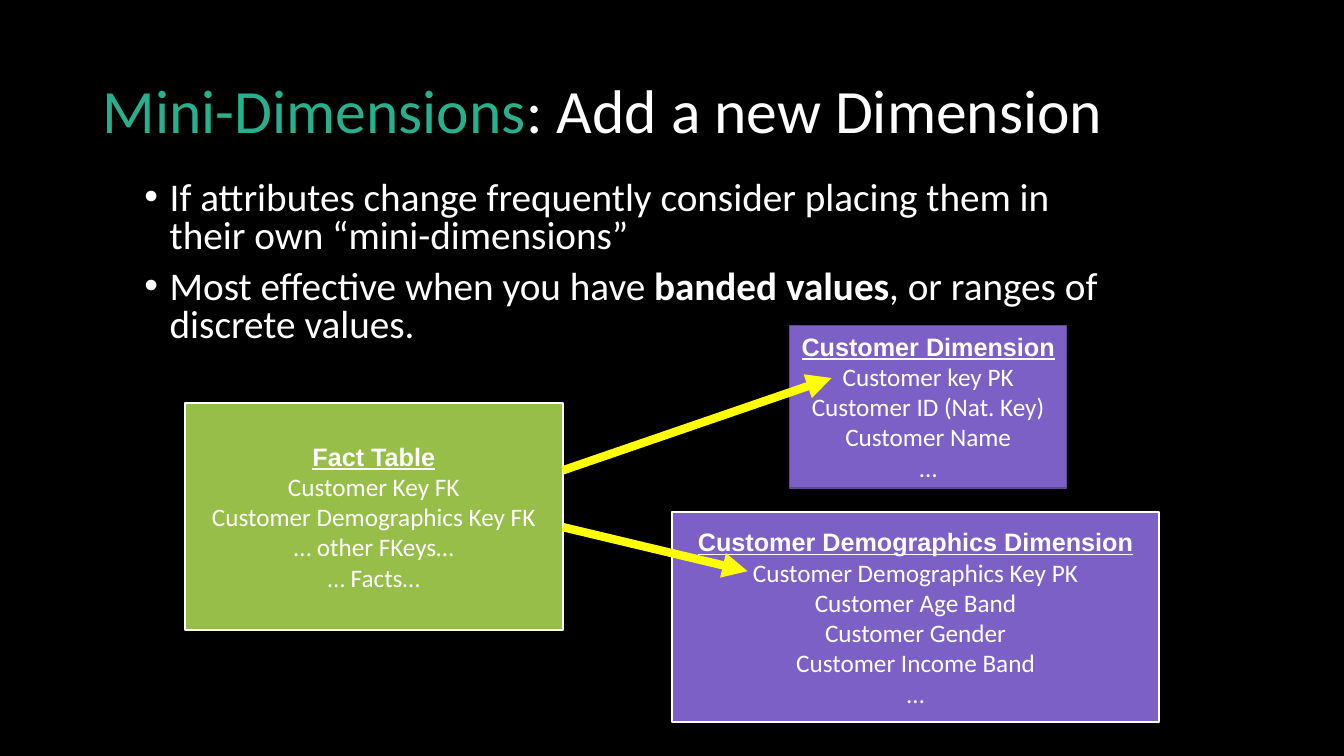
import dataclasses

import lxml.etree
import pptx
import pptx.dml.color
import pptx.enum.shapes
import pptx.enum.text
import pptx.oxml.ns
import pptx.util

Pt = pptx.util.Pt
Align = pptx.enum.text.PP_ALIGN
Anchor = pptx.enum.text.MSO_ANCHOR


def color(code):
    return pptx.dml.color.RGBColor.from_string(code)


@dataclasses.dataclass(frozen=True)
class Theme:
    background = color("000000")
    text = color("FFFFFF")
    accent = color("29AF8C")
    fact = color("97BE49")
    dimension = color("7C60C6")
    dimension_edge = color("5C4792")
    arrow = color("FFFF00")
    font = "Calibri"
    heading_font = "Arial"
    title_size = 44
    body_size = 28
    table_size = 18


@dataclasses.dataclass(frozen=True)
class Box:
    left: float
    top: float
    width: float
    height: float

    @property
    def right(self):
        return self.left + self.width

    def lengths(self):
        return [Pt(value) for value in (self.left, self.top, self.width, self.height)]


THEME = Theme()


def add_element(parent, tag, **attributes):
    return lxml.etree.SubElement(parent, pptx.oxml.ns.qn(tag), **attributes)


def add_span(para, text, size, font=THEME.font, tint=THEME.text, bold=False, underline=False):
    span = para.add_run()
    span.text = text
    span.font.size = Pt(size)
    span.font.name = font
    span.font.color.rgb = tint
    span.font.bold = bold
    span.font.underline = underline


def paragraphs(frame, count):
    return [frame.paragraphs[0]] + [frame.add_paragraph() for _ in range(count - 1)]


def place(holder, box, anchor):
    holder.left, holder.top, holder.width, holder.height = box.lengths()
    frame = holder.text_frame
    frame.auto_size = pptx.enum.text.MSO_AUTO_SIZE.NONE
    frame.word_wrap = True
    frame.vertical_anchor = anchor
    return frame


def add_title(page, box, topic, rest):
    para = place(page.shapes.title, box, Anchor.MIDDLE).paragraphs[0]
    para.alignment = Align.LEFT
    para.line_spacing = 0.9
    add_span(para, topic, THEME.title_size, tint=THEME.accent)
    add_span(para, rest, THEME.title_size)


def add_bullets(page, box, items):
    frame = place(page.placeholders[1], box, Anchor.TOP)
    for para, item in zip(paragraphs(frame, len(items)), items):
        para.alignment = Align.LEFT
        para.line_spacing = 0.8
        para.space_before = Pt(10)
        properties = para._p.get_or_add_pPr()
        properties.set("marL", str(Pt(18)))
        properties.set("indent", str(Pt(-18)))
        add_element(properties, "a:buFont", typeface="Arial")
        add_element(properties, "a:buChar", char="•")
        for text, bold in item:
            add_span(para, text, THEME.body_size, bold=bold)


def add_entity(page, box, fill, edge, edge_width, heading, fields):
    shape = page.shapes.add_shape(pptx.enum.shapes.MSO_SHAPE.RECTANGLE, *box.lengths())
    shape.shadow.inherit = False
    shape.fill.solid()
    shape.fill.fore_color.rgb = fill
    shape.line.color.rgb = edge
    shape.line.width = Pt(edge_width)
    frame = shape.text_frame
    frame.word_wrap = False
    frame.vertical_anchor = Anchor.MIDDLE
    first, *others = paragraphs(frame, len(fields) + 1)
    first.alignment = Align.CENTER
    add_span(first, heading, THEME.table_size, THEME.heading_font, bold=True, underline=True)
    for para, field in zip(others, fields):
        para.alignment = Align.CENTER
        add_span(para, field, THEME.table_size)


def add_key_arrow(page, source, target, drop, inset, depth):
    ends = (source.right, source.top + drop, target.left + inset, target.top + depth)
    arrow = page.shapes.add_connector(
        pptx.enum.shapes.MSO_CONNECTOR.STRAIGHT, *[Pt(value) for value in ends])
    arrow.line.color.rgb = THEME.arrow
    arrow.line.width = Pt(6)
    add_element(arrow.line._get_or_add_ln(), "a:tailEnd", type="triangle")
    add_element(arrow._element.spPr, "a:effectLst")


def add_star_schema(page, box):
    fact = Box(box.left, box.top + 55.5, 270, 162)
    customer = Box(box.left + 432, box.top, 198, 116)
    demographics = Box(box.left + 348, box.top + 133.5, 348, 150)
    add_entity(page, fact, THEME.fact, THEME.text, 1.5, "Fact Table",
               ["Customer Key FK", "Customer Demographics Key FK",
                "… other FKeys…", "… Facts…"])
    add_entity(page, customer, THEME.dimension, THEME.dimension_edge, 1, "Customer Dimension",
               ["Customer key PK", "Customer ID (Nat. Key)", "Customer Name", "…"])
    add_entity(page, demographics, THEME.dimension, THEME.text, 1.5,
               "Customer Demographics Dimension",
               ["Customer Demographics Key PK", "Customer Age Band", "Customer Gender",
                "Customer Income Band", "…"])
    add_key_arrow(page, fact, customer, drop=48, inset=30, depth=37.5)
    add_key_arrow(page, fact, demographics, drop=88.5, inset=54, depth=42)


def main():
    deck = pptx.Presentation()
    deck.slide_width, deck.slide_height = Pt(960), Pt(540)
    page = deck.slides.add_slide(deck.slide_layouts[1])
    page.background.fill.solid()
    page.background.fill.fore_color.rgb = THEME.background
    add_title(page, Box(66, 28.8, 828, 104.4), "Mini-Dimensions", ": Add a new Dimension")
    add_bullets(page, Box(96, 126, 708, 138), [
        [("If attributes change frequently consider placing them in "
          "their own “mini-dimensions”", False)],
        [("Most effective when you have ", False), ("banded values", True),
         (", or ranges of discrete values.", False)],
    ])
    add_star_schema(page, Box(132, 232.5, 696, 283.5))
    deck.save("out.pptx")


if __name__ == "__main__":
    main()
